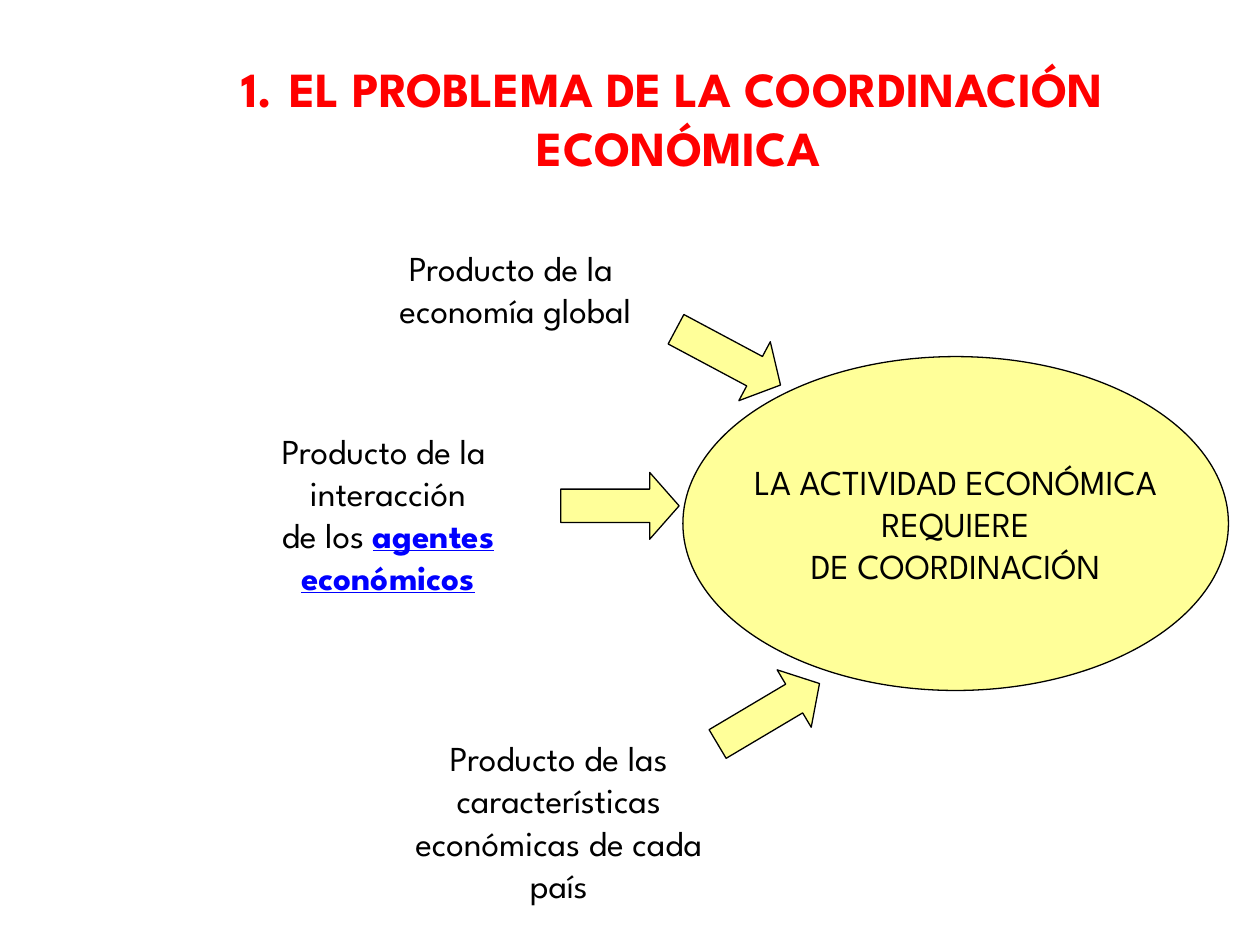
from dataclasses import dataclass

from lxml.etree import SubElement
from pptx import Presentation
from pptx.dml.color import RGBColor
from pptx.enum.shapes import MSO_SHAPE as Preset
from pptx.enum.text import MSO_ANCHOR as Anchor, MSO_AUTO_SIZE as AutoSize, PP_ALIGN as Align
from pptx.oxml.ns import qn
from pptx.util import Inches, Pt

COLUMNS = 100
FONT = "League Spartan"
BLACK, RED, BLUE, YELLOW = "000000", "FF0000", "0000FF", "FFFF99"
ARROW_WIDTH, ARROW_HEIGHT = 9.4, 5.3


@dataclass(frozen=True)
class Box:
    column: float
    row: float
    columns: float
    rows: float


@dataclass(frozen=True)
class Label:
    box: Box
    lines: tuple[str, ...]
    wrap: bool = True
    emphasis: str = ""


@dataclass(frozen=True)
class Arrow:
    column: float
    row: float
    rotation: float = 0


TITLE = Label(Box(15.8, 4.2, 76.1, 10.3), ("EL PROBLEMA DE LA COORDINACIÓN ", "ECONÓMICA"), False)
CONCLUSION = Label(
    Box(54.2, 28.3, 43.3, 26.5),
    ("LA ACTIVIDAD ECONÓMICA", " REQUIERE ", "DE COORDINACIÓN"),
    False,
)
CAUSES = (
    Label(Box(28.2, 19.1, 25.4, 7.7), ("Producto de la ", "economía global"), False),
    Label(Box(30.3, 58, 28.1, 14.3), ("Producto de las características", "económicas de cada país")),
    Label(
        Box(15.3, 33.6, 31, 14.3),
        ("Producto de la ", "interacción", "de los "),
        emphasis="agentes económicos",
    ),
)
ARROWS = (Arrow(53.1, 25.7, 28.1), Arrow(44.5, 37.5), Arrow(56.3, 54, 329.3))


def color(value: str) -> RGBColor:
    return RGBColor.from_string(value)


def place(box: Box, unit: float) -> list[int]:
    return [round(cells * unit) for cells in (box.column, box.row, box.columns, box.rows)]


def write(frame, label: Label, size: float = 20, ink: str = BLACK, bold: bool = False) -> None:
    frame.word_wrap = label.wrap
    for index, line in enumerate(label.lines):
        paragraph = frame.paragraphs[0] if index == 0 else frame.add_paragraph()
        paragraph.alignment = Align.CENTER
        paragraph.font.name = FONT
        paragraph.font.size = Pt(size)
        paragraph.font.bold = bold
        paragraph.font.color.rgb = color(ink)
        paragraph.add_run().text = line
    if label.emphasis:
        run = paragraph.add_run()
        run.text = label.emphasis
        run.font.bold = run.font.underline = True
        run.font.color.rgb = color(BLUE)


def add_label(slide, label: Label, unit: float, **style):
    shape = slide.shapes.add_textbox(*place(label.box, unit))
    shape.text_frame.auto_size = AutoSize.SHAPE_TO_FIT_TEXT
    write(shape.text_frame, label, **style)
    return shape


def number_title(frame) -> None:
    for paragraph in frame.paragraphs:
        properties = paragraph._p.get_or_add_pPr()
        properties.set("marL", str(Inches(0.38)))
        properties.set("indent", str(-Inches(0.38)))
    numbered = frame.paragraphs[0]._p.get_or_add_pPr()
    numbering = SubElement(numbered, qn("a:buAutoNum"), type="arabicPeriod")
    numbered.find(qn("a:defRPr")).addprevious(numbering)


def add_yellow_shape(slide, preset: Preset, box: Box, unit: float):
    shape = slide.shapes.add_shape(preset, *place(box, unit))
    shape.shadow.inherit = False
    shape.fill.solid()
    shape.fill.fore_color.rgb = color(YELLOW)
    shape.line.color.rgb = color(BLACK)
    shape.line.width = Pt(0.75)
    return shape


def add_arrow(slide, arrow: Arrow, unit: float) -> None:
    box = Box(arrow.column, arrow.row, ARROW_WIDTH, ARROW_HEIGHT)
    shape = add_yellow_shape(slide, Preset.RIGHT_ARROW, box, unit)
    shape.adjustments[0] = 0.5
    shape.adjustments[1] = 0.44
    shape.rotation = arrow.rotation


def main() -> None:
    presentation = Presentation()
    presentation.slide_width, presentation.slide_height = Inches(10), Inches(7.5)
    unit = presentation.slide_width / COLUMNS
    slide = presentation.slides.add_slide(presentation.slide_layouts[6])

    title = add_label(slide, TITLE, unit, size=28, ink=RED, bold=True)
    title.text_frame.vertical_anchor = Anchor.MIDDLE
    number_title(title.text_frame)

    ellipse = add_yellow_shape(slide, Preset.OVAL, CONCLUSION.box, unit)
    ellipse.text_frame.vertical_anchor = Anchor.MIDDLE
    write(ellipse.text_frame, CONCLUSION)

    for cause in CAUSES:
        add_label(slide, cause, unit)
    for arrow in ARROWS:
        add_arrow(slide, arrow, unit)

    presentation.save("out.pptx")


if __name__ == "__main__":
    main()
